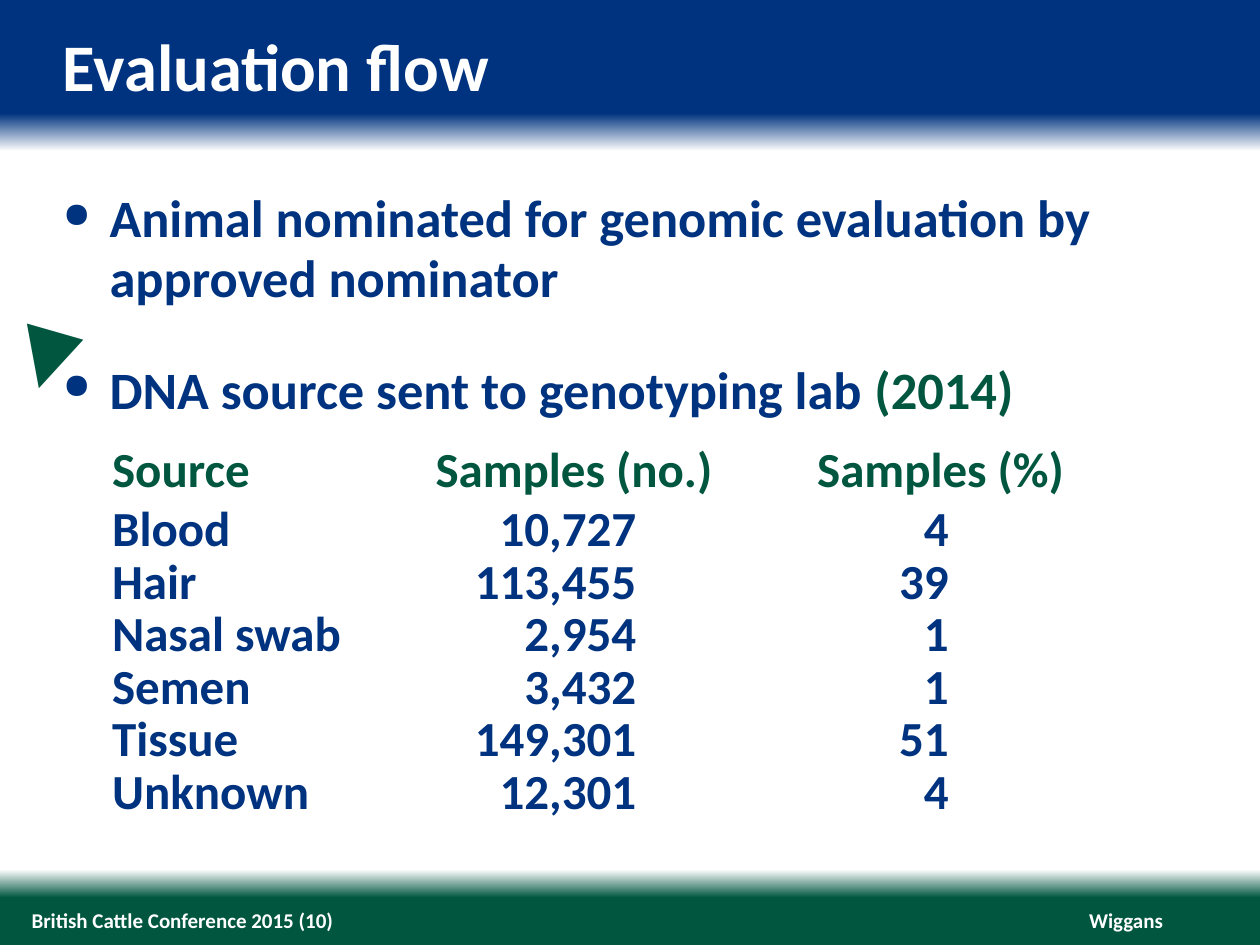
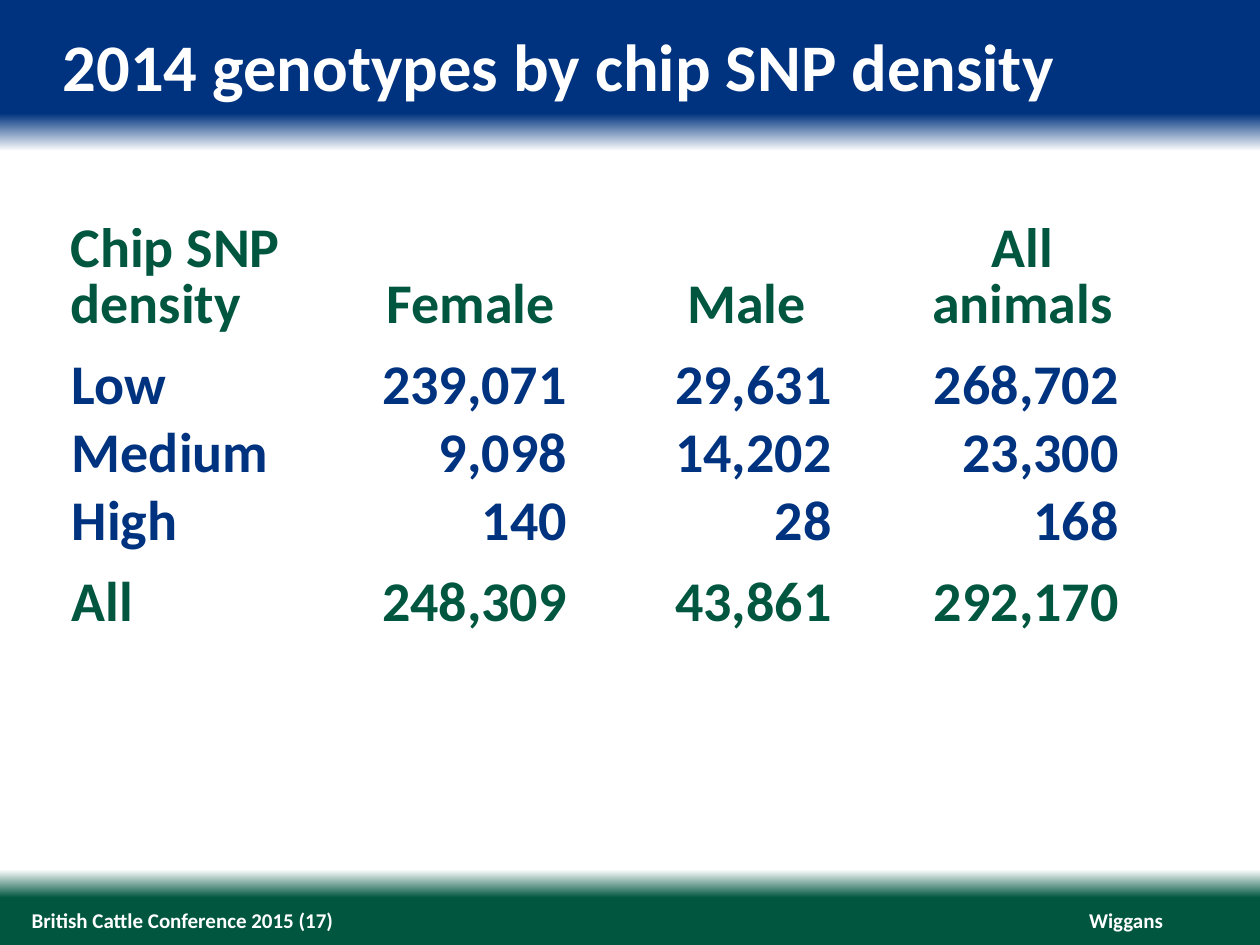
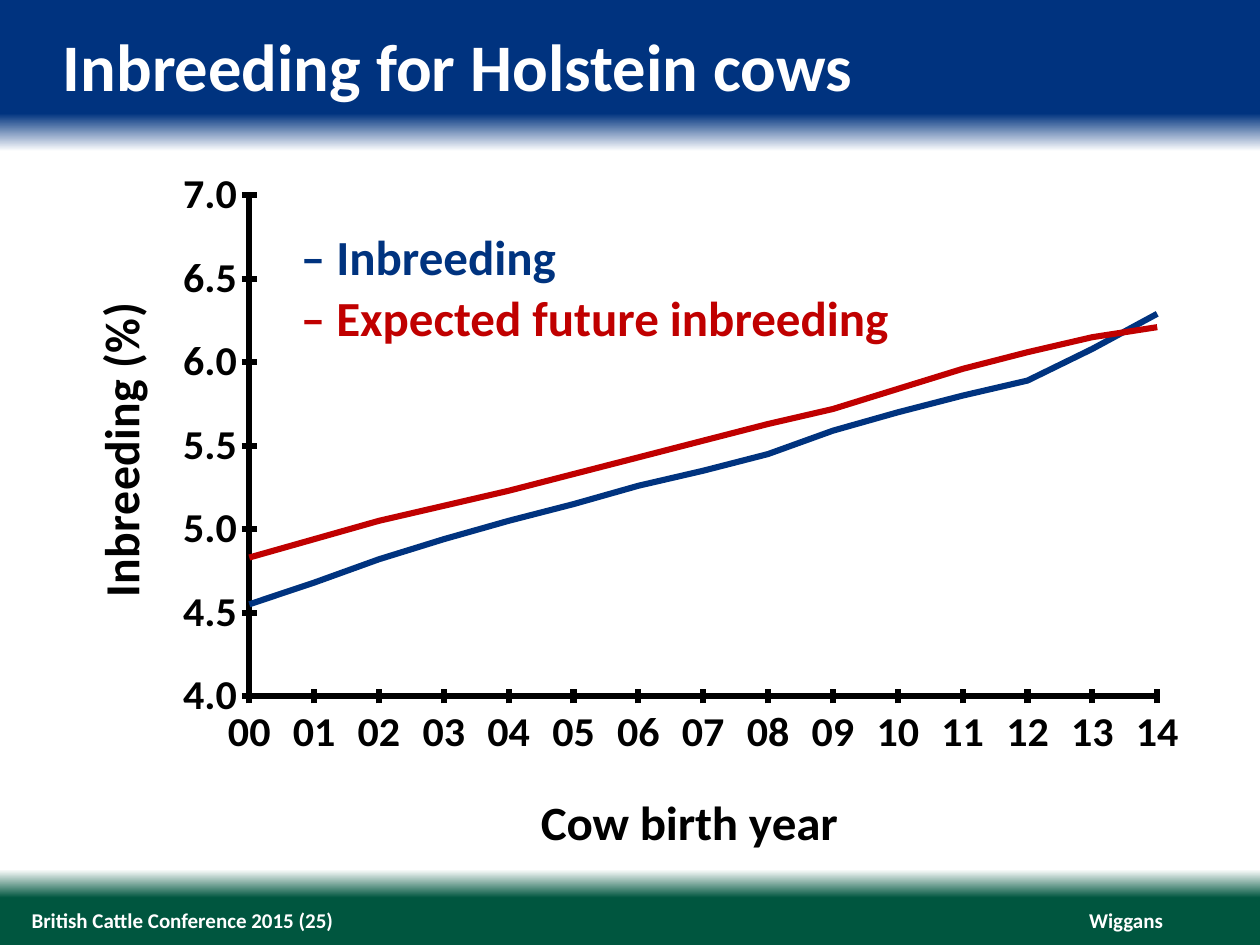
"""Build three slides on genomic evaluation of dairy cattle."""
import pptx
import pptx.chart.data
import pptx.dml.color
import pptx.enum.chart
import pptx.enum.text
import pptx.oxml
import pptx.oxml.ns
import pptx.util
from pptx.util import Inches, Pt

FONT = "Calibri"
BLUE, GREEN, RED, WHITE, BLACK = "00337F", "00563F", "C00000", "FFFFFF", "000000"
BACKGROUND_STOPS = [(0, BLUE), (12, BLUE), (16, WHITE), (92, WHITE), (95, GREEN), (100, GREEN)]
LEFT, CENTER, RIGHT = (
    pptx.enum.text.PP_ALIGN.LEFT,
    pptx.enum.text.PP_ALIGN.CENTER,
    pptx.enum.text.PP_ALIGN.RIGHT,
)

FLOW_BULLETS = [
    [("Animal nominated for genomic evaluation by approved nominator", BLUE)],
    [("DNA source sent to genotyping lab ", BLUE), ("(2014)", GREEN)],
]
SOURCE_TABLE = {
    "left": 0.81, "top": 3.56, "size": 28, "header_spacing": 30, "body_spacing": 30,
    "widths": [2.2, 3.09, 2.73],
    "header_insets": [(0.08, 0.08)] * 3,
    "body_insets": [(0.08, 0.08), (0.08, 1.05), (0.08, 1.3)],
    "rows": [
        (0.41, 0, GREEN, ["Source", "Samples (no.)", "Samples (%)"]),
        (0.46, 0.05, BLUE, ["Blood", "10,727", "4"]),
        (0.41, 0, BLUE, ["Hair", "113,455", "39"]),
        (0.41, 0, BLUE, ["Nasal swab", "2,954", "1"]),
        (0.41, 0, BLUE, ["Semen", "3,432", "1"]),
        (0.41, 0, BLUE, ["Tissue", "149,301", "51"]),
        (0.41, 0, BLUE, ["Unknown", "12,301", "4"]),
    ],
}
DENSITY_TABLE = {
    "left": 0.49, "top": 1.8, "size": 32, "header_spacing": 32, "body_spacing": None,
    "widths": [2.33, 1.83, 2.25, 2.43],
    "header_insets": [(0.07, 0.07), (0, 0), (0.3, 0), (0, 0)],
    "body_insets": [(0.08, 0.08), (0, 0.15), (0, 0.3), (0, 0.45)],
    "rows": [
        (0.88, 0, GREEN, ["Chip SNP density", "Female", "Male", "All\nanimals"]),
        (0.64, 0.1, BLUE, ["Low", "239,071", "29,631", "268,702"]),
        (0.54, 0, BLUE, ["Medium", "9,098", "14,202", "23,300"]),
        (0.54, 0, BLUE, ["High", "140", "28", "168"]),
        (0.64, 0.1, GREEN, ["All", "248,309", "43,861", "292,170"]),
    ],
}
BIRTH_YEARS = [f"{year:02d}" for year in range(15)]
INBREEDING = [
    ("Inbreeding", BLUE, 1.75,
     [4.55, 4.68, 4.82, 4.94, 5.05, 5.15, 5.26, 5.35, 5.45, 5.59, 5.7, 5.8, 5.89, 6.08, 6.29]),
    ("Expected future inbreeding", RED, 2.23,
     [4.83, 4.94, 5.05, 5.14, 5.23, 5.33, 5.43, 5.53, 5.63, 5.72, 5.84, 5.96, 6.06, 6.15, 6.21]),
]


def rgb(color):
    return pptx.dml.color.RGBColor.from_string(color)


def make_element(tag, **attributes):
    element = pptx.oxml.parse_xml(f"<{tag} {pptx.oxml.ns.nsdecls(tag.split(':')[0])}/>")
    for name, value in attributes.items():
        element.set(name, str(value))
    return element


def find(parent, tag):
    return parent.find(".//" + pptx.oxml.ns.qn(tag))


def set_font(font, size, color, bold=True):
    font.name, font.size, font.bold = FONT, Pt(size), bold
    font.color.rgb = rgb(color)


def write(paragraph, text, size=28, color=BLACK, bold=True, align=LEFT, spacing=None):
    paragraph.alignment = align
    if spacing:
        paragraph.line_spacing = Pt(spacing)
    run = paragraph.add_run()
    run.text = text
    set_font(run.font, size, color, bold)


def add_text(slide, text, box, insets=True, wrap=True, middle=False, rotation=0, **style):
    shape = slide.shapes.add_textbox(*map(Inches, box))
    shape.rotation = rotation
    frame = shape.text_frame
    frame.word_wrap = wrap
    if not insets:
        frame.margin_left = frame.margin_right = frame.margin_top = frame.margin_bottom = 0
    if middle:
        frame.vertical_anchor = pptx.enum.text.MSO_ANCHOR.MIDDLE
    if text:
        write(frame.paragraphs[0], text, **style)
    return frame


def set_background(presentation):
    master = presentation.slide_master
    fill = master.background.fill
    fill.gradient()
    fill.gradient_angle = 270
    stops = find(master.element, "a:gsLst")
    for stop in list(stops):
        stops.remove(stop)
    for position, color in BACKGROUND_STOPS:
        stop = make_element("a:gs", pos=position * 1000)
        stop.append(make_element("a:srgbClr", val=color))
        stops.append(stop)


def add_slide(presentation, title, number):
    slide = presentation.slides.add_slide(presentation.slide_layouts[6])
    footer = {"insets": False, "middle": True, "size": 12, "color": WHITE}
    add_text(slide, "Wiggans", (8.64, 7.2, 0.59, 0.2), wrap=False, align=RIGHT, **footer)
    add_text(slide, f"British Cattle Conference 2015 ({number})", (0.25, 7.2, 7.42, 0.2), **footer)
    add_text(slide, title, (0.5, 0.2, 9, 0.64), insets=False, size=38, color=WHITE)
    return slide


def add_bullets(slide, bullets, box):
    frame = add_text(slide, "", box, insets=False)
    for index, runs in enumerate(bullets):
        paragraph = frame.add_paragraph() if index else frame.paragraphs[0]
        properties = paragraph._p.get_or_add_pPr()
        properties.set("marL", str(Inches(0.37)))
        properties.set("indent", str(-Inches(0.37)))
        bullet_color = make_element("a:buClr")
        bullet_color.append(make_element("a:srgbClr", val=BLUE))
        properties.append(bullet_color)
        properties.append(make_element("a:buSzPct", val=67000))
        properties.append(make_element("a:buChar", char="●"))
        paragraph.space_after = Pt(30)
        for text, color in runs:
            write(paragraph, text, size=30, color=color, spacing=34)


def add_data_table(slide, content):
    rows, widths = content["rows"], content["widths"]
    height = sum(row[0] for row in rows)
    table = slide.shapes.add_table(
        len(rows), len(widths),
        *map(Inches, (content["left"], content["top"], sum(widths), height)),
    ).table
    table.first_row = table.horz_banding = False
    for column, width in zip(table.columns, widths):
        column.width = Inches(width)
    for row_index, (row_height, top_inset, color, texts) in enumerate(rows):
        table.rows[row_index].height = Inches(row_height)
        part = "body" if row_index else "header"
        for column_index, text in enumerate(texts):
            cell = table.cell(row_index, column_index)
            cell.fill.background()
            cell.vertical_anchor = pptx.enum.text.MSO_ANCHOR.BOTTOM
            left, right = content[part + "_insets"][column_index]
            cell.margin_left, cell.margin_right = Inches(left), Inches(right)
            cell.margin_top, cell.margin_bottom = Inches(top_inset), 0
            align = LEFT if column_index == 0 else RIGHT if row_index else CENTER
            for line_index, line in enumerate(text.split("\n")):
                frame = cell.text_frame
                paragraph = frame.add_paragraph() if line_index else frame.paragraphs[0]
                write(paragraph, line, size=content["size"], color=color, align=align,
                      spacing=content[part + "_spacing"])


def set_layout(parent, index, **places):
    for existing in parent.findall(pptx.oxml.ns.qn("c:layout")):
        parent.remove(existing)
    layout, manual = make_element("c:layout"), make_element("c:manualLayout")
    if "w" in places:
        manual.append(make_element("c:layoutTarget", val="inner"))
    for name in ("x", "y"):
        manual.append(make_element(f"c:{name}Mode", val="edge"))
    for name, value in places.items():
        manual.append(make_element(f"c:{name}", val=value))
    layout.append(manual)
    parent.insert(index, layout)


def format_axis(axis, title, x, y):
    axis.has_major_gridlines = False
    axis.major_tick_mark = pptx.enum.chart.XL_TICK_MARK.CROSS
    axis.minor_tick_mark = pptx.enum.chart.XL_TICK_MARK.NONE
    axis.format.line.color.rgb = rgb(BLACK)
    axis.format.line.width = Pt(3.5)
    set_font(axis.tick_labels.font, 24, BLACK)
    write(axis.axis_title.text_frame.paragraphs[0], title, align=CENTER)
    set_layout(find(axis.axis_title._element, "c:tx").getparent(), 1, x=x, y=y)


def add_inbreeding_chart(slide):
    data = pptx.chart.data.CategoryChartData(number_format="0.00")
    data.categories = BIRTH_YEARS
    for name, color, top, values in INBREEDING:
        data.add_series(name, values)
    chart = slide.shapes.add_chart(
        pptx.enum.chart.XL_CHART_TYPE.LINE, *map(Inches, (0.34, 0.87, 9.47, 6.02)), data
    ).chart
    chart.has_legend = chart.has_title = False
    set_font(chart.font, 18, BLACK)
    chart.plots[0].vary_by_categories = False
    for series, (name, color, top, values) in zip(chart.plots[0].series, INBREEDING):
        series.smooth = False
        series.marker.style = pptx.enum.chart.XL_MARKER_STYLE.NONE
        series.format.line.color.rgb = rgb(color)
        series.format.line.width = Pt(3.5)

    format_axis(chart.category_axis, "Cow birth year", 0.41, 0.91)
    value_axis = chart.value_axis
    format_axis(value_axis, "Inbreeding (%)", 0.03, 0.26)
    find(value_axis.axis_title._element, "a:bodyPr").set("rot", "-5400000")
    value_axis.minimum_scale, value_axis.maximum_scale, value_axis.major_unit = 4, 7, 0.5
    value_axis.tick_labels.number_format = "#,##0.0"
    value_axis.tick_labels.number_format_is_linked = False

    value_element = find(chart.element, "c:valAx")
    for existing in value_element.findall(pptx.oxml.ns.qn("c:crossBetween")):
        value_element.remove(existing)
    find(value_element, "c:crosses").addnext(make_element("c:crossBetween", val="midCat"))
    set_layout(find(chart.element, "c:plotArea"), 0, x=0.173, y=0.116, w=0.761, h=0.678)


def main():
    presentation = pptx.Presentation()
    presentation.slide_width, presentation.slide_height = Inches(10), Inches(7.5)
    set_background(presentation)

    slide = add_slide(presentation, "Evaluation flow", 10)
    add_bullets(slide, FLOW_BULLETS, (0.5, 1.5, 9, 1.85))
    add_text(slide, "▼", (0.07, 2.35, 0.57, 0.84), rotation=16.1, size=44, color=GREEN, bold=False)
    add_data_table(slide, SOURCE_TABLE)

    slide = add_slide(presentation, "2014 genotypes by chip SNP density", 17)
    add_data_table(slide, DENSITY_TABLE)

    slide = add_slide(presentation, "Inbreeding for Holstein cows", 25)
    add_inbreeding_chart(slide)
    for name, color, top, values in INBREEDING:
        add_text(slide, f"– {name}", (2.29, top, 4.97, 0.57), color=color)

    presentation.save("out.pptx")


if __name__ == "__main__":
    main()
